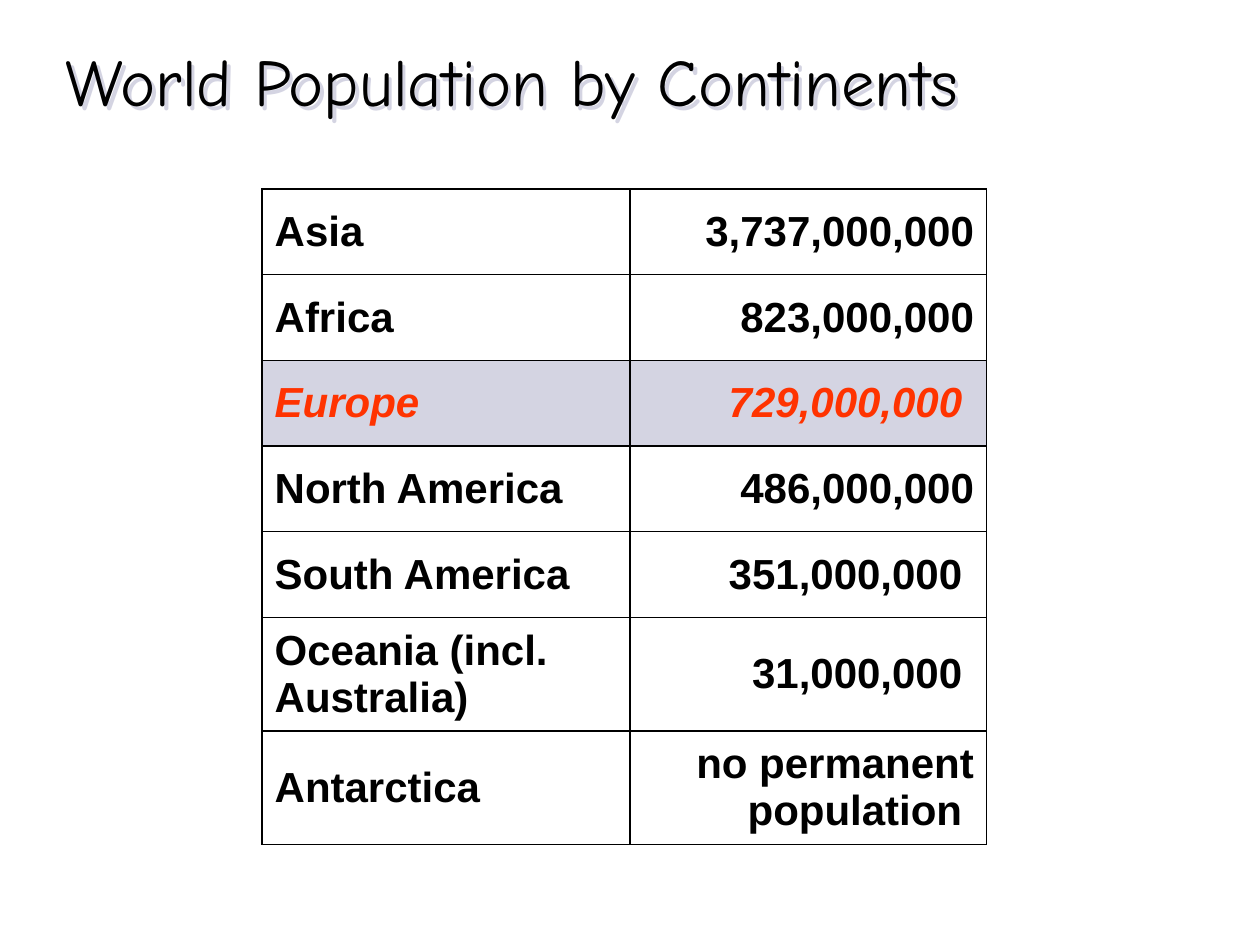
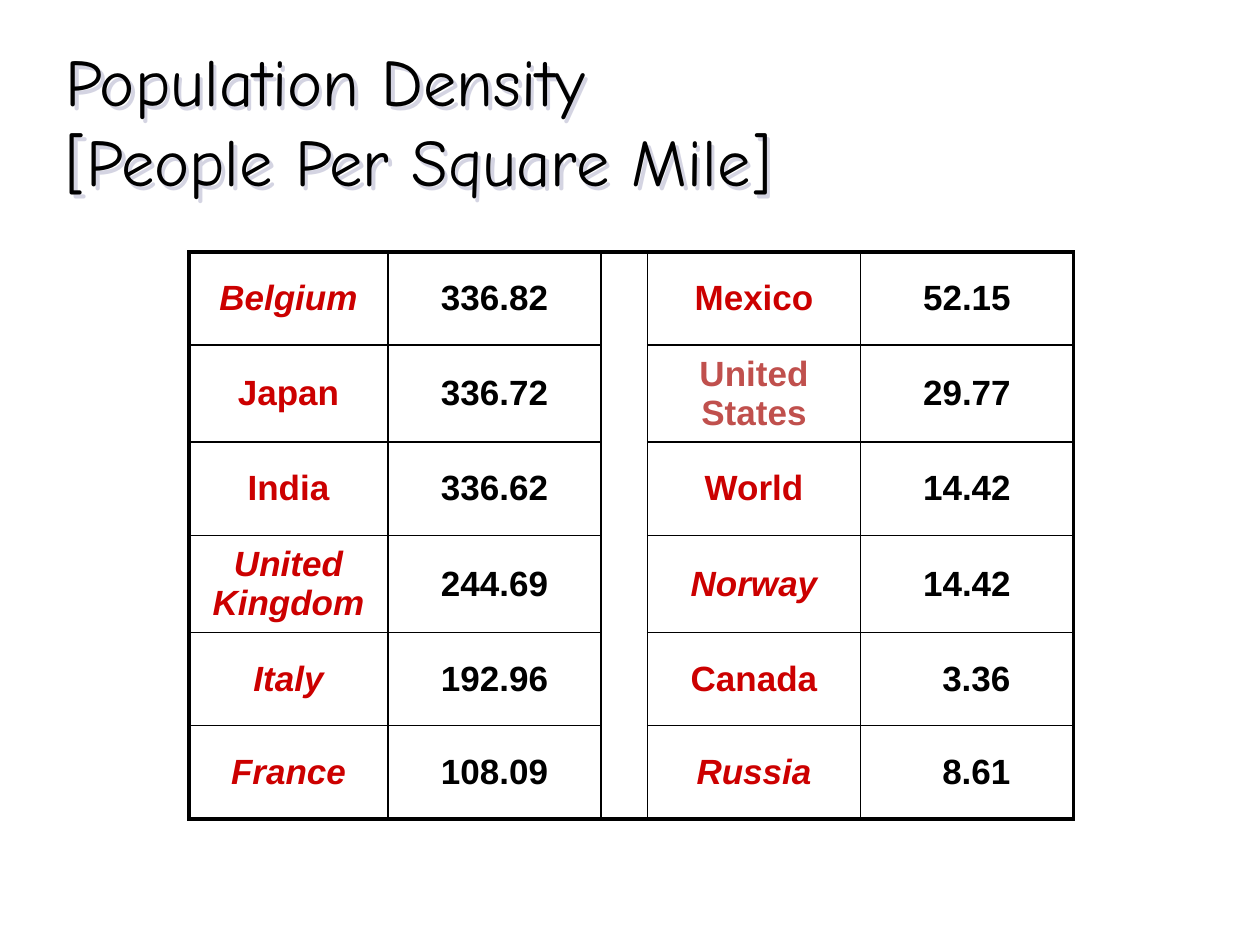
from pptx import Presentation
from pptx.dml.color import RGBColor as RGB
from pptx.enum.text import MSO_ANCHOR as Anchor, MSO_AUTO_SIZE as Fit, PP_ALIGN as Align
from pptx.oxml import parse_xml
from pptx.oxml.ns import nsdecls, qn
from pptx.util import Inches, Pt
from lxml import etree

# Shared style
BLACK = RGB(0x00, 0x00, 0x00)
WHITE = RGB(0xFF, 0xFF, 0xFF)
LILAC = RGB(0xAB, 0xAB, 0xC7)
ORANGE = RGB(0xFF, 0x33, 0x00)
RED = RGB(0xCC, 0x00, 0x00)
ROSE = RGB(0xC0, 0x50, 0x4D)
HEAD, BODY = "Comic Neue", "Arial"
THIN, THICK = 1, 2.25

# Slide data
PEOPLE = [
    ("Asia", "3,737,000,000"),
    ("Africa", "823,000,000"),
    ("Europe", "729,000,000 "),
    ("North America", "486,000,000"),
    ("South America", "351,000,000 "),
    ("Oceania (incl. Australia)", "31,000,000 "),
    ("Antarctica", "no permanent population "),
]
DENSITY = [
    ("Belgium", "336.82", "Mexico", "52.15"),
    ("Japan", "336.72", "United States", "29.77"),
    ("India", "336.62", "World", "14.42"),
    ("United Kingdom", "244.69", "Norway", "14.42"),
    ("Italy", "192.96", "Canada", "3.36"),
    ("France", "108.09", "Russia", "8.61"),
]
EUROPE = {"Belgium", "United Kingdom", "Italy", "France", "Norway", "Russia"}
GAP = 2


def add_title(deck, text, height):
    """Add a Title Only slide with the shadowed heading."""
    slide = deck.slides.add_slide(deck.slide_layouts[5])
    title = slide.shapes.title
    title.left, title.top = Inches(0.42), Inches(0.27)
    title.width, title.height = Inches(9.25), Inches(height)
    frame = title.text_frame
    frame.text = text
    frame.word_wrap = True
    frame.auto_size = Fit.SHAPE_TO_FIT_TEXT
    frame.vertical_anchor = Anchor.TOP
    para = frame.paragraphs[0]
    para.alignment = Align.LEFT
    for run in para.runs:
        style(run.font, HEAD, 38, BLACK)
    title._element.spPr.append(parse_xml(
        f'<a:effectLst {nsdecls("a")}>'
        '<a:outerShdw dist="35921" dir="2700000" algn="ctr" rotWithShape="0">'
        f'<a:srgbClr val="{LILAC}"><a:alpha val="50000"/></a:srgbClr>'
        '</a:outerShdw></a:effectLst>'))
    return slide


def style(font, name, size, color, bold=False, italic=False):
    font.name, font.size = name, Pt(size)
    font.bold, font.italic = bold, italic
    font.color.rgb = color


def add_grid(slide, left, top, cols, rows):
    """Add a plain table with the given column widths and row heights."""
    frame = slide.shapes.add_table(
        len(rows), len(cols), Inches(left), Inches(top),
        Inches(sum(cols)), Inches(sum(rows)))
    table = frame.table
    table.first_row = table.horz_banding = False
    for col, width in zip(table.columns, cols):
        col.width = Inches(width)
    for row, height in zip(table.rows, rows):
        row.height = Inches(height)
    return table


def rule(cell, **sides):
    """Draw black borders; sides are L, R, T, B with widths in points."""
    props = cell._tc.get_or_add_tcPr()
    for side in "LRTB":
        if side in sides:
            line = etree.SubElement(props, qn(f"a:ln{side}"), w=str(Pt(sides[side])))
            fill = etree.SubElement(line, qn("a:solidFill"))
            etree.SubElement(fill, qn("a:srgbClr"), val=str(BLACK))


def tint(cell, color):
    """Fill a cell at half strength."""
    cell.fill.solid()
    cell.fill.fore_color.rgb = color
    tone = cell._tc.tcPr.find(qn("a:solidFill"))[0]
    etree.SubElement(tone, qn("a:alpha"), val="50000")


def write(cell, text, size, color, align, italic=False):
    cell.text_frame.text = text
    cell.vertical_anchor = Anchor.MIDDLE
    para = cell.text_frame.paragraphs[0]
    para.alignment = align
    style(para.runs[0].font, BODY, size, color, True, italic)


def add_people(deck):
    slide = add_title(deck, "World Population by Continents", 0.73)
    table = add_grid(slide, 2.08, 1.5, [2.92, 2.83], [0.68] * 5 + [0.9] * 2)
    for r, row in enumerate(PEOPLE):
        focus = row[0] == "Europe"
        for c, text in enumerate(row):
            cell = table.cell(r, c)
            rule(cell, L=THIN, R=THIN, T=THIN, B=THIN)
            tint(cell, LILAC if focus else WHITE)
            write(cell, text, 24, ORANGE if focus else BLACK,
                  Align.RIGHT if c else Align.LEFT, focus)


def add_density(deck):
    slide = add_title(deck, "Population Density\v[People Per Square Mile]", 1.37)
    table = add_grid(slide, 1.5, 2, [1.58, 1.69, 0.37, 1.69, 1.69],
                     [0.74, 0.77, 0.74, 0.77, 0.74, 0.74])
    last = len(DENSITY) - 1
    table.cell(0, GAP).merge(table.cell(last, GAP))
    for r, row in enumerate(DENSITY):
        for c, text in zip((0, 1, 3, 4), row):
            cell = table.cell(r, c)
            rule(cell, L=THIN if c else THICK, R=THICK if c == 4 else THIN,
                 T=THIN if r else THICK, B=THICK if r == last else THIN)
            cell.fill.background()
            if c in (0, 3):
                color = ROSE if text == "United States" else RED
            else:
                color = BLACK
            write(cell, text, 20, color, Align.CENTER, text in EUROPE)
            # Shift short numbers to line up the decimal points
            if len(text) == 4:
                cell.margin_left = Inches(0.25)
        # Empty column between the two halves
        blank = table.cell(r, GAP)
        ends = {} if 0 < r < last else {"T": THICK, "B": THICK}
        rule(blank, L=THIN, R=THIN, **ends)
        blank.fill.background()


def main():
    deck = Presentation()
    deck.slide_width, deck.slide_height = Inches(10), Inches(7.5)
    add_people(deck)
    add_density(deck)
    deck.save("out.pptx")


if __name__ == "__main__":
    main()
